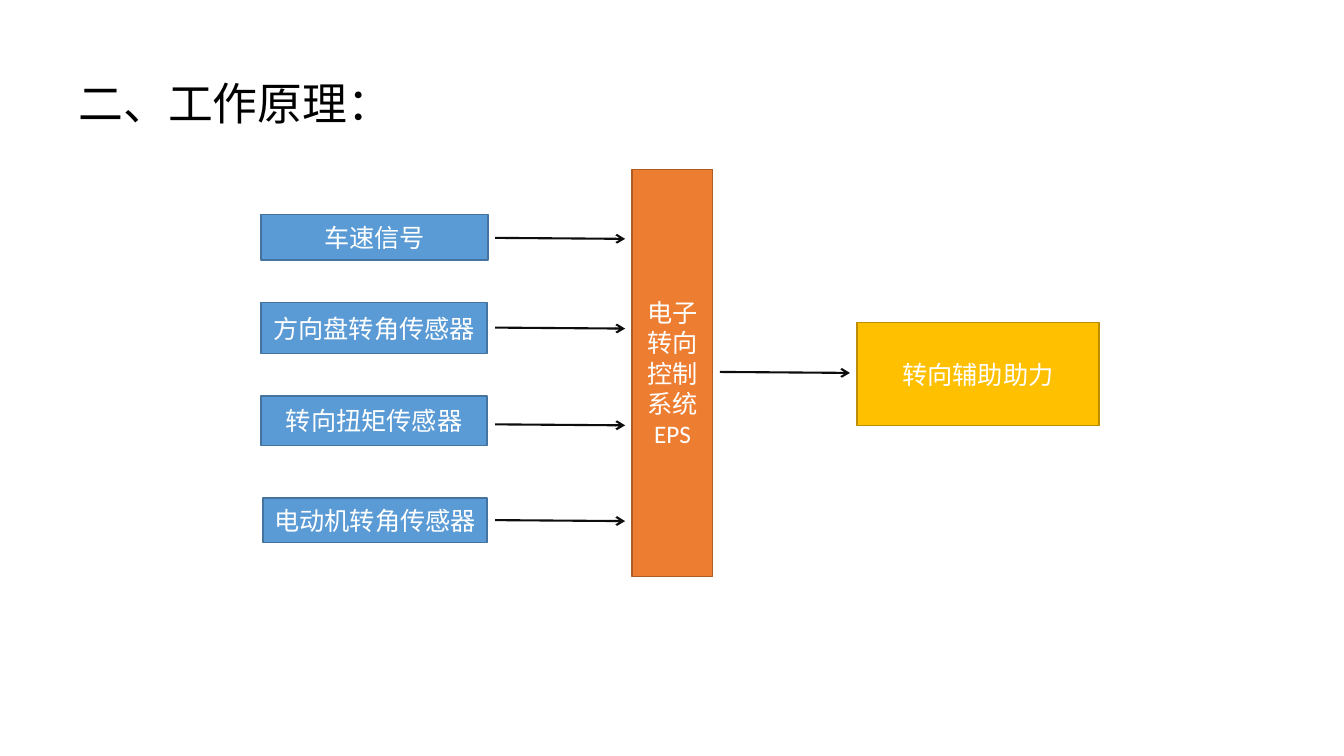
from dataclasses import dataclass

from lxml import etree
from pptx import Presentation
from pptx.dml.color import RGBColor
from pptx.enum import shapes, text
from pptx.oxml import ns
from pptx.slide import Slide
from pptx.util import Inches, Pt

FONT = "Calibri"
WHITE = RGBColor(0xFF, 0xFF, 0xFF)
BLACK = RGBColor(0x00, 0x00, 0x00)
ARROW_COLOR = RGBColor(0x0D, 0x0D, 0x0D)
BLUE, BLUE_EDGE = RGBColor(0x5B, 0x9B, 0xD5), RGBColor(0x43, 0x73, 0x9E)
ORANGE, ORANGE_EDGE = RGBColor(0xED, 0x7D, 0x31), RGBColor(0xAF, 0x5C, 0x24)
GOLD, GOLD_EDGE = RGBColor(0xFF, 0xC0, 0x00), RGBColor(0xBD, 0x8E, 0x00)

ARROW_LENGTH = 1.29
ARROW_DROP = 0.01


@dataclass(frozen=True)
class Box:
    label: str
    left: float
    top: float
    width: float
    height: float
    fill: RGBColor = BLUE
    edge: RGBColor = BLUE_EDGE


@dataclass(frozen=True)
class Arrow:
    left: float
    top: float


CONTROLLER = Box("电子转向控制系统EPS", 6.27, 1.68, 0.8, 4.04, ORANGE, ORANGE_EDGE)
SENSORS = [
    Box("车速信号", 2.59, 2.13, 2.25, 0.45),
    Box("方向盘转角传感器", 2.59, 3, 2.24, 0.51),
    Box("转向扭矩传感器", 2.59, 3.93, 2.24, 0.49),
    Box("电动机转角传感器", 2.61, 4.94, 2.22, 0.44),
]
ASSIST = Box("转向辅助助力", 8.5, 3.2, 2.4, 1.02, GOLD, GOLD_EDGE)
SENSOR_ARROWS = [Arrow(4.91, top) for top in (2.36, 3.25, 4.21, 5.16)]
ASSIST_ARROW = Arrow(7.14, 3.69)


def format_text(frame: text.MSO_ANCHOR, size: float, color: RGBColor) -> None:
    for paragraph in frame.paragraphs:
        for run in paragraph.runs:
            run.font.name = FONT
            run.font.size = Pt(size)
            run.font.color.rgb = color


def draw_box(slide: Slide, box: Box) -> None:
    shape = slide.shapes.add_shape(
        shapes.MSO_SHAPE.RECTANGLE,
        Inches(box.left), Inches(box.top), Inches(box.width), Inches(box.height),
    )
    shape.shadow.inherit = False
    shape.fill.solid()
    shape.fill.fore_color.rgb = box.fill
    shape.line.color.rgb = box.edge
    shape.line.width = Pt(1)
    frame = shape.text_frame
    frame.text = box.label
    frame.word_wrap = True
    frame.vertical_anchor = text.MSO_ANCHOR.MIDDLE
    frame.paragraphs[0].alignment = text.PP_ALIGN.CENTER
    format_text(frame, 18, WHITE)


def draw_arrow(slide: Slide, arrow: Arrow) -> None:
    connector = slide.shapes.add_connector(
        shapes.MSO_CONNECTOR.STRAIGHT,
        Inches(arrow.left), Inches(arrow.top),
        Inches(arrow.left + ARROW_LENGTH), Inches(arrow.top + ARROW_DROP),
    )
    connector.line.color.rgb = ARROW_COLOR
    connector.line.width = Pt(1.5)
    properties = connector._element.spPr
    line = properties.find(ns.qn("a:ln"))
    etree.SubElement(line, ns.qn("a:tailEnd"), type="arrow")
    etree.SubElement(properties, ns.qn("a:effectLst"))


def draw_title(slide: Slide, title: str) -> None:
    shape = slide.shapes.add_textbox(Inches(0.68), Inches(0.7), Inches(4.04), Inches(0.64))
    frame = shape.text_frame
    frame.text = title
    frame.word_wrap = True
    frame.auto_size = text.MSO_AUTO_SIZE.SHAPE_TO_FIT_TEXT
    format_text(frame, 32, BLACK)


def main() -> None:
    presentation = Presentation()
    presentation.slide_width = Inches(13.33)
    presentation.slide_height = Inches(7.5)
    slide = presentation.slides.add_slide(presentation.slide_layouts[6])
    for box in [CONTROLLER, *SENSORS, ASSIST]:
        draw_box(slide, box)
    for arrow in [*SENSOR_ARROWS, ASSIST_ARROW]:
        draw_arrow(slide, arrow)
    draw_title(slide, "二、工作原理：")
    presentation.save("out.pptx")


if __name__ == "__main__":
    main()
